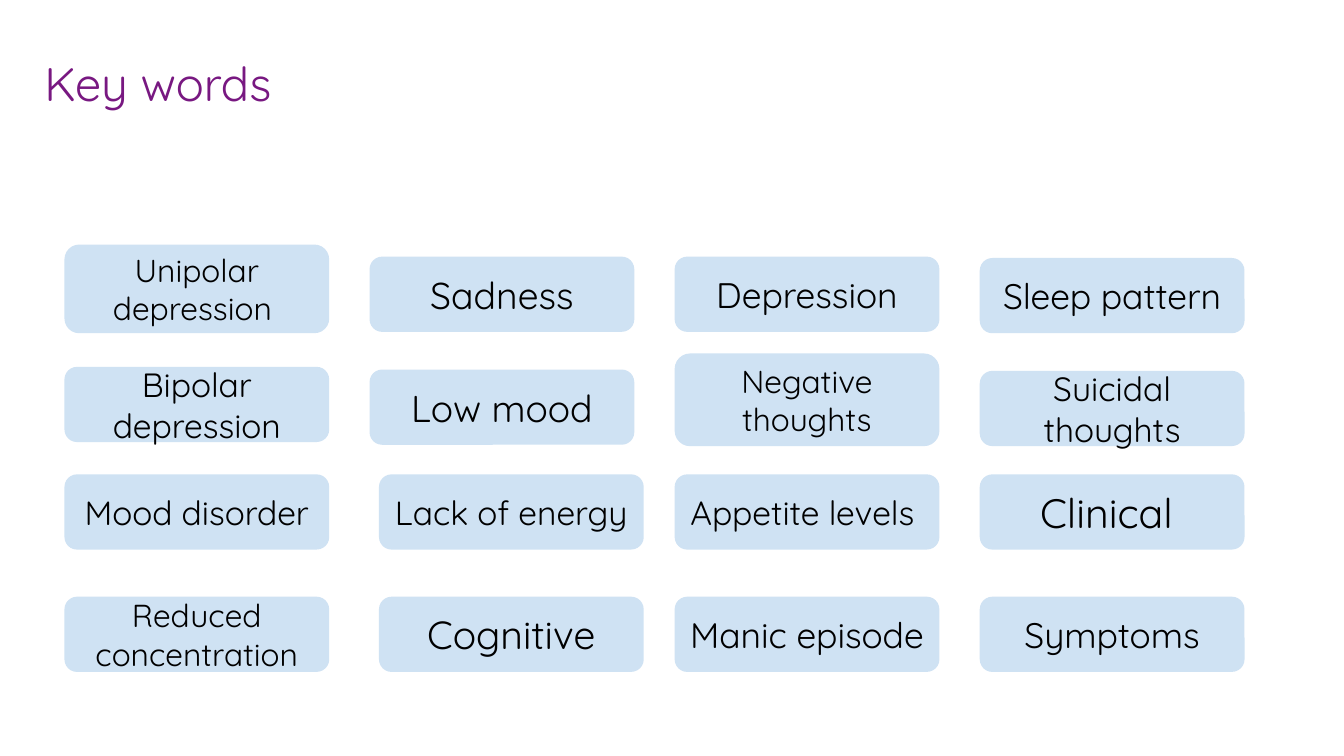
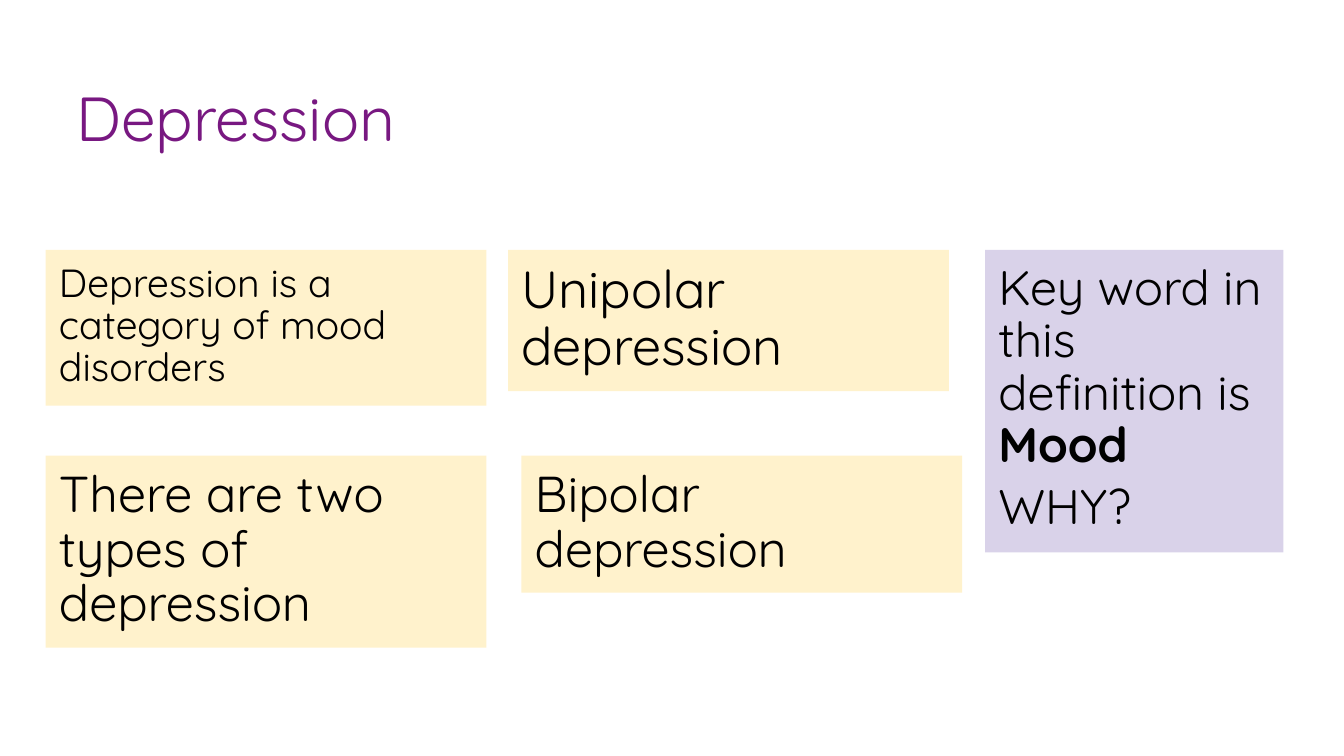
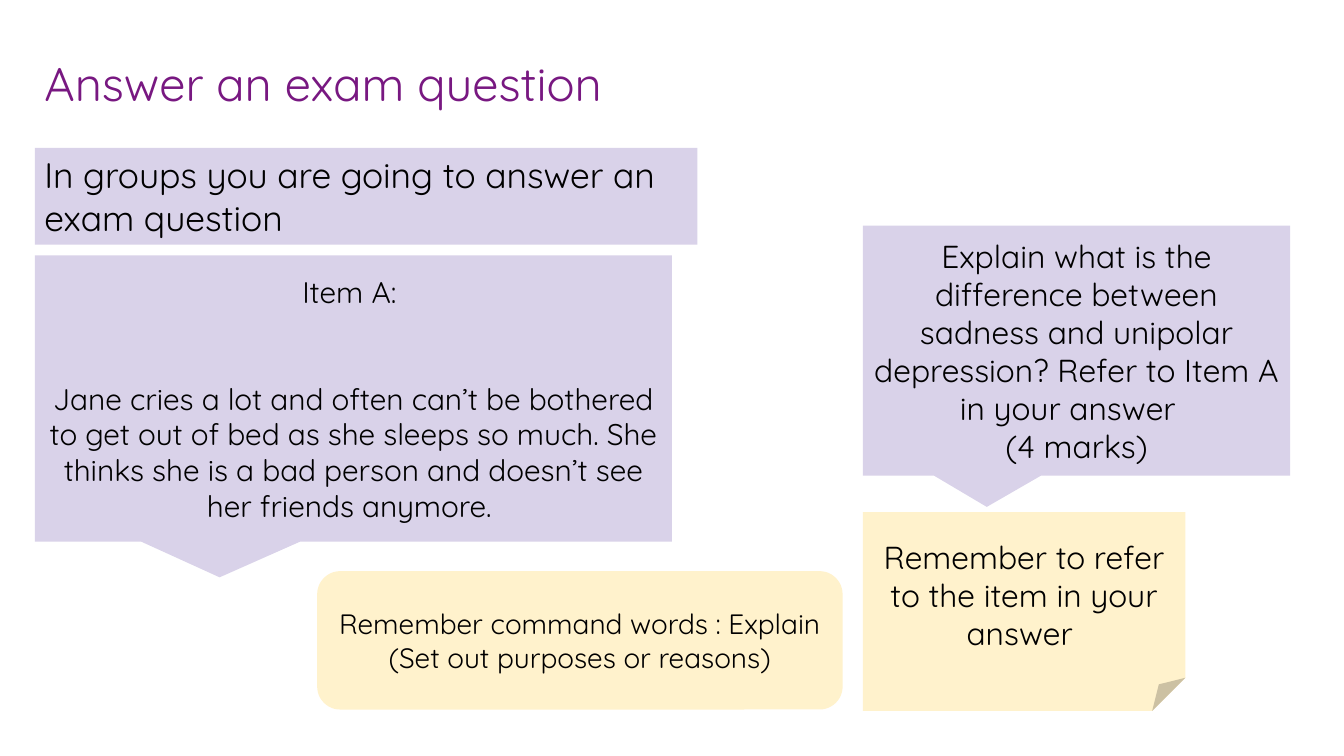
import pptx
import pptx.dml.color
import pptx.enum.shapes
import pptx.enum.text
import pptx.util

SHAPES = pptx.enum.shapes.MSO_SHAPE
ALIGN = pptx.enum.text.PP_ALIGN
ANCHOR = pptx.enum.text.MSO_ANCHOR

# The grid has 100 columns and 56.25 rows of square cells.
COLUMNS, ROWS = 100, 56.25
CELL = pptx.util.Inches(0.1)

FONT = "Quicksand"
PURPLE, BLACK = "781881", "000000"
BLUE, CREAM, LILAC = "CFE2F3", "FFF2CC", "D9D2E9"
NARROW_INSETS = (0.7, 0.4)
WIDE_INSETS = (1, 1)

CARD_LEFT, CARD_STEP = 4.8, 22.7
CARD_WIDTH, CARD_HEIGHT = 19.7, 5.6
CARD_TOPS = (19.1, 27.5, 35.3, 44.4)

# Each word has a text size and, where it leaves the grid, its own place.
KEY_WORDS = (
    (("Unipolar depression ", 17, {"top": 18.2, "height": 6.6}),
     ("Sadness", 20, {}),
     ("Depression", 19, {}),
     ("Sleep pattern", 19, {"top": 19.2})),
    (("Bipolar depression", 18, {"top": 27.3}),
     ("Low mood", 20, {}),
     ("Negative thoughts", 17, {"top": 26.3, "height": 6.9}),
     ("Suicidal thoughts", 18, {"top": 27.6})),
    (("Mood disorder", 18, {}),
     ("Lack of energy", 18, {"left": 28.2}),
     ("Appetite levels ", 18, {}),
     ("Clinical ", 22, {})),
    (("Reduced concentration", 17, {}),
     ("Cognitive", 21, {"left": 28.2}),
     ("Manic episode", 19, {}),
     ("Symptoms", 19, {})),
)


def cells(count):
    return pptx.util.Emu(round(count * CELL))


def color(hex_string):
    return pptx.dml.color.RGBColor.from_string(hex_string)


def set_frame(frame, insets, anchor):
    frame.word_wrap = True
    frame.auto_size = pptx.enum.text.MSO_AUTO_SIZE.NONE
    frame.vertical_anchor = anchor
    frame.margin_left = frame.margin_right = cells(insets[0])
    frame.margin_top = frame.margin_bottom = cells(insets[1])


def format_paragraph(paragraph, size, font_color, alignment):
    paragraph.alignment = alignment
    paragraph.font.name = FONT
    paragraph.font.size = pptx.util.Pt(size)
    paragraph.font.color.rgb = color(font_color)


def add_title_slide(presentation, text, place=(2.6, 3.65, 69.9, 4.7),
                    size=25.2, insets=NARROW_INSETS):
    slide = presentation.slides.add_slide(presentation.slide_layouts[5])
    title = slide.shapes.title
    title.left, title.top, title.width, title.height = map(cells, place)
    title.text_frame.text = text
    set_frame(title.text_frame, insets, ANCHOR.TOP)
    format_paragraph(title.text_frame.paragraphs[0], size, PURPLE, ALIGN.LEFT)
    return slide


def add_box(slide, kind, place, fill, lines, size, alignment=ALIGN.CENTER,
            anchor=ANCHOR.MIDDLE, insets=NARROW_INSETS, adjustments=()):
    """Add a filled shape with one paragraph for each of its lines."""
    shape = slide.shapes.add_shape(kind, *map(cells, place))
    shape.shadow.inherit = False
    shape.fill.solid()
    shape.fill.fore_color.rgb = color(fill)
    shape.line.fill.background()
    for index, value in enumerate(adjustments):
        shape.adjustments[index] = value
    shape.text_frame.text = "\n".join(lines)
    set_frame(shape.text_frame, insets, anchor)
    for paragraph in shape.text_frame.paragraphs:
        format_paragraph(paragraph, size, BLACK, alignment)
    return shape


def add_note(slide, place, fill, lines, size):
    note = add_box(slide, SHAPES.RECTANGLE, place, fill, lines, size,
                   ALIGN.LEFT, ANCHOR.TOP, WIDE_INSETS)
    for paragraph in note.text_frame.paragraphs:
        paragraph.line_spacing = 0.9
    return note


def add_key_words_slide(presentation):
    slide = add_title_slide(presentation, "Key words")
    for row_top, words in zip(CARD_TOPS, KEY_WORDS):
        for column, (word, size, own_place) in enumerate(words):
            place = {"left": CARD_LEFT + column * CARD_STEP, "top": row_top,
                     "width": CARD_WIDTH, "height": CARD_HEIGHT} | own_place
            add_box(slide, SHAPES.ROUNDED_RECTANGLE, place.values(), BLUE,
                    [word], size)


def add_depression_slide(presentation):
    slide = add_title_slide(presentation, " Depression", (3.4, 4.9, 93.2, 6.3),
                            33.3, WIDE_INSETS)
    upper, lower, width = 18.6, 33.9, 32.8
    for left, top, height, text, size in (
            (3.4, upper, 11.6, "Depression is a category of mood disorders", 21),
            (3.4, lower, 14.3, "There are two types of depression", 27),
            (37.8, upper, 10.5, "Unipolar depression", 28),
            (38.8, lower, 10.2, "Bipolar depression", 27)):
        add_note(slide, (left, top, width, height), CREAM, [text], size)
    question = add_note(slide, (73.3, upper, 22.2, 22.5), LILAC,
                        ["Key word in this definition is ", "WHY?"], 26)
    definition, why = question.text_frame.paragraphs
    key_word = definition.add_run()
    key_word.text = "Mood"
    key_word.font.bold = True
    why.space_before = pptx.util.Pt(5.2)


def add_exam_slide(presentation):
    slide = add_title_slide(presentation, "Answer an exam question")
    add_box(slide, SHAPES.RECTANGLE, (2.6, 11, 49.3, 7.2), LILAC,
            ["In groups you are going to answer an exam question"], 19,
            ALIGN.LEFT, ANCHOR.TOP)
    item = add_box(
        slide, SHAPES.RECTANGULAR_CALLOUT, (2.6, 19, 47.4, 21.3), LILAC,
        ["Item A: ",
         "Jane cries a lot and often can’t be bothered to get out of bed as "
         "she sleeps so much. She thinks she is a bad person and doesn’t see "
         "her friends anymore. "],
        16, adjustments=(-0.21, 0.625))
    item.text_frame.paragraphs[1].space_before = pptx.util.Pt(38)
    add_box(slide, SHAPES.ROUNDED_RECTANGULAR_CALLOUT, (64.2, 16.8, 31.8, 18.6),
            LILAC,
            ["Explain what is the difference between sadness and unipolar "
             "depression? Refer to Item A in your answer  ", "(4 marks)"],
            17, adjustments=(-0.21, 0.625, 0))
    add_box(slide, SHAPES.ROUNDED_RECTANGLE, (23.6, 42.5, 39.1, 10.3), CREAM,
            ["Remember command words : Explain (Set out purposes or reasons)"],
            15)
    add_box(slide, SHAPES.FOLDED_CORNER, (64.2, 38.1, 24, 14.8), CREAM,
            ["Remember to refer to the item in your answer "], 17)


def main():
    presentation = pptx.Presentation()
    presentation.slide_width = cells(COLUMNS)
    presentation.slide_height = cells(ROWS)
    add_key_words_slide(presentation)
    add_depression_slide(presentation)
    add_exam_slide(presentation)
    presentation.save("out.pptx")


if __name__ == "__main__":
    main()
